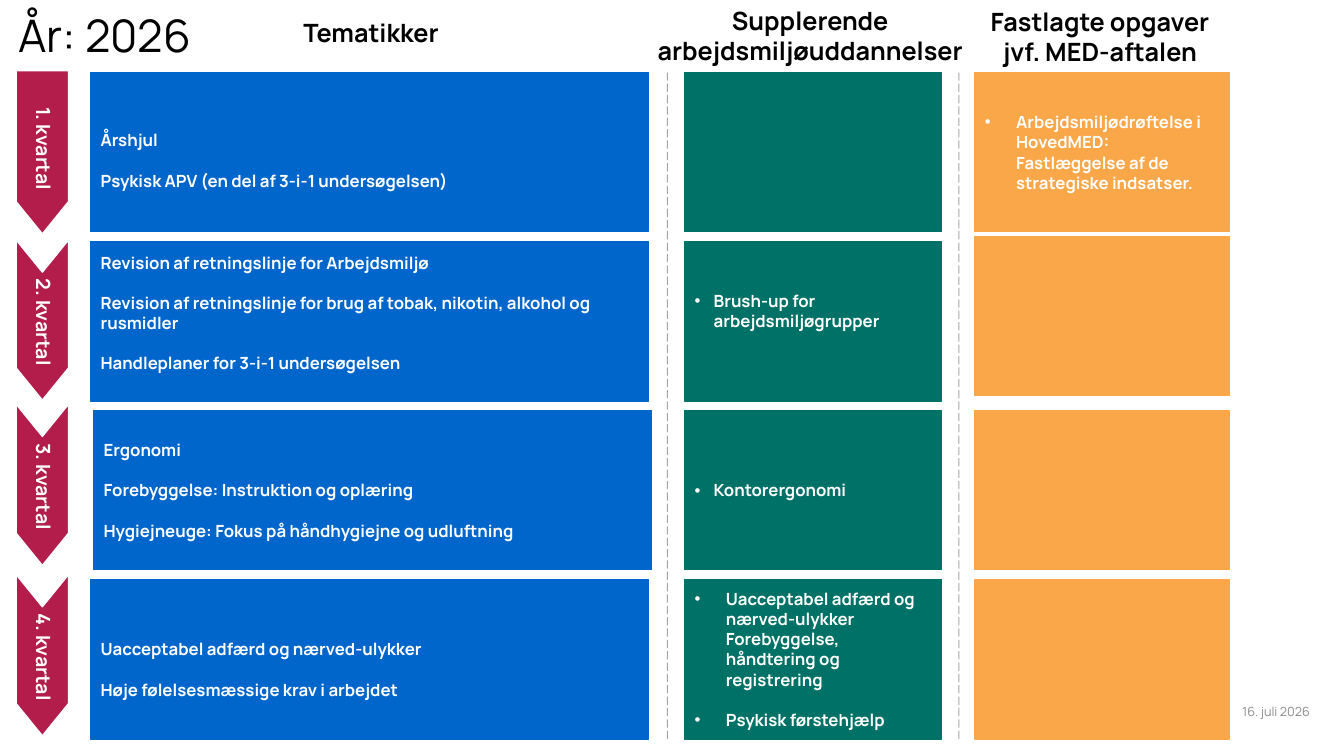
from lxml import etree
from pptx import Presentation, util as u
from pptx.dml.color import RGBColor
from pptx.enum import dml, shapes, text
from pptx.oxml.ns import qn

FONT = "Manrope"
TOP, BOTTOM, ROW_HEIGHT = 0.72, 7.33, 1.58
PITCH = (BOTTOM - TOP - ROW_HEIGHT) / 3
LINE_GAP = 14.4  # height of one 12 pt line, in points
LEFT, CENTER, RIGHT = text.PP_ALIGN.LEFT, text.PP_ALIGN.CENTER, text.PP_ALIGN.RIGHT


def paint(shape, color, line_color):
    shape.shadow.inherit = False
    shape.fill.solid()
    shape.fill.fore_color.rgb = RGBColor.from_string(color)
    shape.line.color.rgb = RGBColor.from_string(line_color)
    shape.line.width = u.Pt(1)


def write(shape, lines, size, color, bold=False, align=LEFT,
          anchor=text.MSO_ANCHOR.MIDDLE, hang=0, spacing=None):
    """Fill a shape with paragraphs; a hang above zero makes them bullets."""
    frame = shape.text_frame
    frame.word_wrap = True
    frame.auto_size = text.MSO_AUTO_SIZE.NONE
    frame.vertical_anchor = anchor
    for i, line in enumerate(lines):
        para = frame.paragraphs[0] if i == 0 else frame.add_paragraph()
        para.text = line
        para.alignment = align
        if hang:
            props = para._p.get_or_add_pPr()
            props.set("marL", str(u.Inches(hang)))
            props.set("indent", str(-u.Inches(hang)))
            etree.SubElement(props, qn("a:buFont")).set("typeface", "Arial")
            etree.SubElement(props, qn("a:buChar")).set("char", "•")
        if i:
            para.space_before = u.Pt(LINE_GAP)
        if spacing:
            para.line_spacing = spacing
        para.font.name = FONT
        para.font.size = u.Pt(size)
        para.font.bold = bold
        para.font.color.rgb = RGBColor.from_string(color)


deck = Presentation()
deck.slide_width, deck.slide_height = u.Inches(13.33), u.Inches(7.5)
page = deck.slides.add_slide(deck.slide_layouts[5])

title = page.shapes.title
title.left, title.top = u.Inches(0.08), u.Inches(-0.15)
title.width, title.height = u.Inches(3.27), u.Inches(0.82)
write(title, ["År: 2026"], 32, "000000", anchor=text.MSO_ANCHOR.BOTTOM, spacing=0.9)

# Column headings and date
for heading, x, y, width, height in [
    ("Tematikker", 0.9, 0.12, 5.56, 0.4),
    ("Supplerende arbejdsmiljøuddannelser", 6.39, 0, 3.29, 0.71),
    ("Fastlagte opgaver jvf. MED-aftalen", 9.65, 0.01, 2.52, 0.71),
]:
    box = page.shapes.add_textbox(*map(u.Inches, (x, y, width, height)))
    write(box, [heading], 18, "000000", True, CENTER, text.MSO_ANCHOR.TOP)

date = page.shapes.add_textbox(*map(u.Inches, (11.83, 6.86, 1.26, 0.4)))
write(date, ["16. juli 2026"], 9, "8C8C8C", align=RIGHT)

# Quarter arrows, drawn pointing right and turned to point down
ARROW_WIDTH, TIP, ARROW_MIDDLE = 0.52, 0.32, 0.42
for i, (y, length) in enumerate([(0.7, 1.62), (2.38, 1.59), (4.01, 1.6), (5.7, 1.6)]):
    outline = [(length - TIP, 0), (length, ARROW_WIDTH / 2),
               (length - TIP, ARROW_WIDTH), (0, ARROW_WIDTH)]
    if i:
        outline.append((TIP, ARROW_WIDTH / 2))
    builder = page.shapes.build_freeform(0, 0)
    builder.add_line_segments([(u.Inches(px), u.Inches(py)) for px, py in outline])
    arrow = builder.convert_to_shape()
    arrow.left = u.Inches(ARROW_MIDDLE - length / 2)
    arrow.top = u.Inches(y + length / 2 - ARROW_WIDTH / 2)
    arrow.rotation = 90
    paint(arrow, "B21D4B", "FFFFFF")
    frame = arrow.text_frame
    frame.margin_left, frame.margin_right = map(u.Inches, (0.32, 0.28) if i else (0.08, 0.15))
    frame.margin_top = frame.margin_bottom = u.Inches(0.04)
    write(arrow, [f"{i + 1}. kvartal"], 14, "FFFFFF", True, CENTER, spacing=0.9)

# Dashed column separators
for x in (6.62, 9.51):
    rule = page.shapes.add_connector(
        shapes.MSO_CONNECTOR.STRAIGHT, *map(u.Inches, (x, BOTTOM, x, TOP)))
    rule.line.color.rgb = RGBColor.from_string("000000")
    rule.line.width = u.Pt(0.75)
    rule.line.dash_style = dml.MSO_LINE.LONG_DASH
    tint = rule.line._ln.find(".//" + qn("a:srgbClr"))
    etree.SubElement(tint, qn("a:alpha")).set("val", "35000")
    etree.SubElement(rule._element.spPr, qn("a:effectLst"))

# Each cell: lines, hanging indent, extra top and bottom margin in points
EMPTY = ([], 0, 0, 0)
columns = [
    (0.9, 5.53, "0066CC", [
        (["Årshjul", "Psykisk APV (en del af 3-i-1 undersøgelsen)"], 0, 11.4, 0),
        (["Revision af retningslinje for Arbejdsmiljø",
          "Revision af retningslinje for brug af tobak, nikotin, alkohol og rusmidler",
          "Handleplaner for 3-i-1 undersøgelsen"], 0, 0, 12),
        (["Ergonomi", "Forebyggelse: Instruktion og oplæring",
          "Hygiejneuge: Fokus på håndhygiejne og udluftning"], 0, 0, 0),
        (["Uacceptabel adfærd og nærved-ulykker",
          "Høje følelsesmæssige krav i arbejdet"], 0, LINE_GAP, 0),
    ]),
    (6.79, 2.55, "007167", [
        EMPTY,
        (["Brush-up for arbejdsmiljøgrupper"], 0.19, 0, LINE_GAP),
        (["Kontorergonomi"], 0.19, 0, 0),
        (["Uacceptabel adfærd og nærved-ulykker Forebyggelse, håndtering og registrering",
          "Psykisk førstehjælp"], 0.31, 0, 0),
    ]),
    (9.67, 2.52, "FAA749", [
        (["Arbejdsmiljødrøftelse i HovedMED: Fastlæggelse af de strategiske indsatser."],
         0.31, 0, 0),
        EMPTY, EMPTY, EMPTY,
    ]),
]
nudges = {(0, 2): (0.03, 0), (2, 1): (0, -0.05)}  # (column, row): shift in inches
for c, (x, width, color, cells) in enumerate(columns):
    for r, (lines, hang, above, below) in enumerate(cells):
        dx, dy = nudges.get((c, r), (0, 0))
        cell = page.shapes.add_shape(
            shapes.MSO_SHAPE.RECTANGLE,
            *map(u.Inches, (x + dx, TOP + r * PITCH + dy, width, ROW_HEIGHT)))
        paint(cell, color, color)
        cell.text_frame.margin_top = u.Inches(0.05) + u.Pt(above)
        cell.text_frame.margin_bottom = u.Inches(0.05) + u.Pt(below)
        write(cell, lines, 12, "FFFFFF", True, hang=hang)

deck.save("out.pptx")
